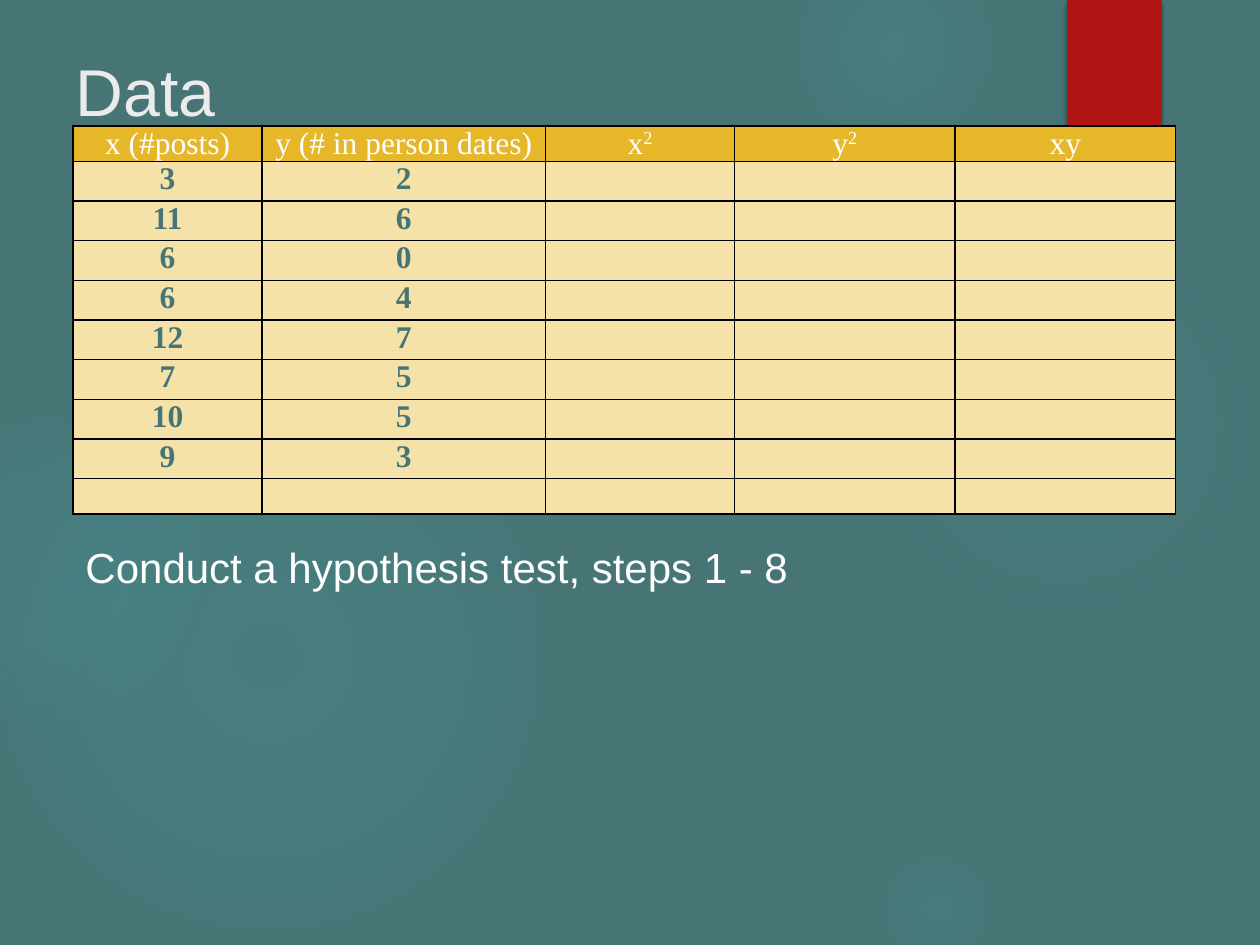
"""Build the data-table slide for a correlation hypothesis test."""
from dataclasses import dataclass

from lxml import etree
from pptx import Presentation
from pptx.dml.color import RGBColor
from pptx.enum import shapes, text
from pptx.oxml import parse_xml
from pptx.oxml.ns import nsdecls
from pptx.util import Inches, Pt


@dataclass(frozen=True)
class Theme:
    background: str = "477576"
    glow: str = "50B9C1"
    ribbon: str = "B01513"
    title: str = "EBEBEB"
    white: str = "FFFFFF"
    border: str = "000000"
    header: str = "E6B729"
    cell: str = "F5E2A9"
    sans: str = "Arial"
    serif: str = "Times New Roman"
    title_size: float = 37.8
    body_size: float = 24
    table_size: float = 18


THEME = Theme()
GLOWS = [
    (6.89, 1.83, 3.08, (7, 6), 69),
    (6.22, -0.5, 1.75, (14, 7), 73),
    (6.89, 6.67, 1.08, (9, 5), 66),
    (-0.17, 2.92, 4.58, (11, 10), 75),
    (-0.92, 3.17, 2.58, (8, 8), 72),
]
HEADERS = ["x (#posts)", "y (# in person dates)", "x2", "y2", "xy"]
DATA = [(3, 2), (11, 6), (6, 0), (6, 4), (12, 7), (7, 5), (10, 5), (9, 3)]
COLUMN_WIDTHS = [1.5, 2.25, 1.5, 1.75, 1.75]
TABLE_HEIGHT = 3.08
EDGE_ROW_HEIGHT = 0.28


def format_run(run, size, font, color, bold=False):
    run.font.size = Pt(size)
    run.font.name = font
    run.font.bold = bold
    run.font.color.rgb = RGBColor.from_string(color)


def add_plain_shape(slide, kind, left, top, width, height):
    shape = slide.shapes.add_shape(
        kind, Inches(left), Inches(top), Inches(width), Inches(height))
    shape.shadow.inherit = False
    shape.line.fill.background()
    return shape


def add_glow(slide, left, top, size, alphas, fade):
    shape = add_plain_shape(
        slide, shapes.MSO_SHAPE.OVAL, left, top, size, size)
    stops = "".join(
        f'<a:gs pos="{position * 1000}"><a:srgbClr val="{THEME.glow}">'
        f'<a:alpha val="{alpha * 1000}"/></a:srgbClr></a:gs>'
        for position, alpha in zip((0, 36, fade), (*alphas, 0)))
    gradient = parse_xml(
        f'<a:gradFill {nsdecls("a")}><a:gsLst>{stops}</a:gsLst>'
        '<a:path path="circle"><a:fillToRect l="50000" t="50000" '
        'r="50000" b="50000"/></a:path></a:gradFill>')
    shape._element.spPr.find("{*}prstGeom").addnext(gradient)


def add_ribbon(slide):
    shape = add_plain_shape(
        slide, shapes.MSO_SHAPE.RECTANGLE, 8.47, 0, 0.75, 1.2)
    shape.fill.solid()
    shape.fill.fore_color.rgb = RGBColor.from_string(THEME.ribbon)
    shape._element.spPr.find("{*}effectLst").append(parse_xml(
        f'<a:outerShdw {nsdecls("a")} blurRad="{Pt(3)}" dist="{Pt(2)}" '
        'dir="5400000"><a:srgbClr val="000000"><a:alpha val="45000"/>'
        '</a:srgbClr></a:outerShdw>'))


def set_title(slide, wording):
    title = slide.shapes.title
    title.left, title.top = Inches(0.5), Inches(0.3)
    title.width, title.height = Inches(9), Inches(0.62)
    frame = title.text_frame
    frame.text = wording
    frame.auto_size = text.MSO_AUTO_SIZE.NONE
    frame.vertical_anchor = text.MSO_ANCHOR.TOP
    frame.margin_top, frame.margin_bottom = Inches(0.1), 0
    paragraph = frame.paragraphs[0]
    paragraph.alignment = text.PP_ALIGN.LEFT
    format_run(paragraph.runs[0], THEME.title_size, THEME.sans, THEME.title)
    slide.shapes._spTree.append(title._element)


def add_borders(cell):
    properties = cell._tc.get_or_add_tcPr()
    for index, side in enumerate(("lnL", "lnR", "lnT", "lnB")):
        properties.insert(index, parse_xml(
            f'<a:{side} {nsdecls("a")} w="{Pt(1)}"><a:solidFill>'
            f'<a:srgbClr val="{THEME.border}"/></a:solidFill></a:{side}>'))


def fill_cell(cell, wording, is_header):
    cell.margin_left = cell.margin_right = Inches(0.07)
    cell.margin_top = cell.margin_bottom = 0
    cell.fill.solid()
    cell.fill.fore_color.rgb = RGBColor.from_string(
        THEME.header if is_header else THEME.cell)
    add_borders(cell)
    paragraph = cell.text_frame.paragraphs[0]
    paragraph.alignment = text.PP_ALIGN.CENTER
    if not wording:
        ending = paragraph._p.get_or_add_endParaRPr()
        ending.set("sz", str(THEME.table_size * 100))
        etree.SubElement(
            ending, ending.tag.replace("endParaRPr", "latin"),
            typeface=THEME.serif)
        return
    squared = is_header and wording.endswith("2")
    for part in (wording if squared else [wording]):
        run = paragraph.add_run()
        run.text = part
        format_run(run, THEME.table_size, THEME.serif,
                   THEME.white if is_header else THEME.background,
                   not is_header)
    if squared:
        run.font._element.set("baseline", "30000")


def add_data_table(slide):
    rows = [HEADERS, *[(str(x), str(y), "", "", "") for x, y in DATA],
            [""] * len(HEADERS)]
    table = slide.shapes.add_table(
        len(rows), len(HEADERS), Inches(0.58), Inches(1),
        Inches(sum(COLUMN_WIDTHS)), Inches(TABLE_HEIGHT)).table
    table.horz_banding = False
    for column, width in zip(table.columns, COLUMN_WIDTHS):
        column.width = Inches(width)
    data_height = (TABLE_HEIGHT - 2 * EDGE_ROW_HEIGHT) / len(DATA)
    for index, values in enumerate(rows):
        is_edge = index in (0, len(rows) - 1)
        table.rows[index].height = Inches(
            EDGE_ROW_HEIGHT if is_edge else data_height)
        for cell, value in zip(table.rows[index].cells, values):
            fill_cell(cell, value, index == 0)


def add_instruction(slide, wording):
    box = slide.shapes.add_textbox(
        Inches(0.58), Inches(4.25), Inches(8.58), Inches(0.5))
    frame = box.text_frame
    frame.word_wrap = True
    frame.text = wording
    format_run(frame.paragraphs[0].runs[0],
               THEME.body_size, THEME.sans, THEME.white)


def main():
    presentation = Presentation()
    presentation.slide_width = Inches(10)
    presentation.slide_height = Inches(7.5)
    slide = presentation.slides.add_slide(presentation.slide_layouts[5])
    slide.background.fill.solid()
    slide.background.fill.fore_color.rgb = RGBColor.from_string(
        THEME.background)
    for glow in GLOWS:
        add_glow(slide, *glow)
    add_ribbon(slide)
    set_title(slide, "Data")
    add_data_table(slide)
    add_instruction(slide, "Conduct a hypothesis test, steps 1 - 8")
    presentation.save("out.pptx")


if __name__ == "__main__":
    main()
